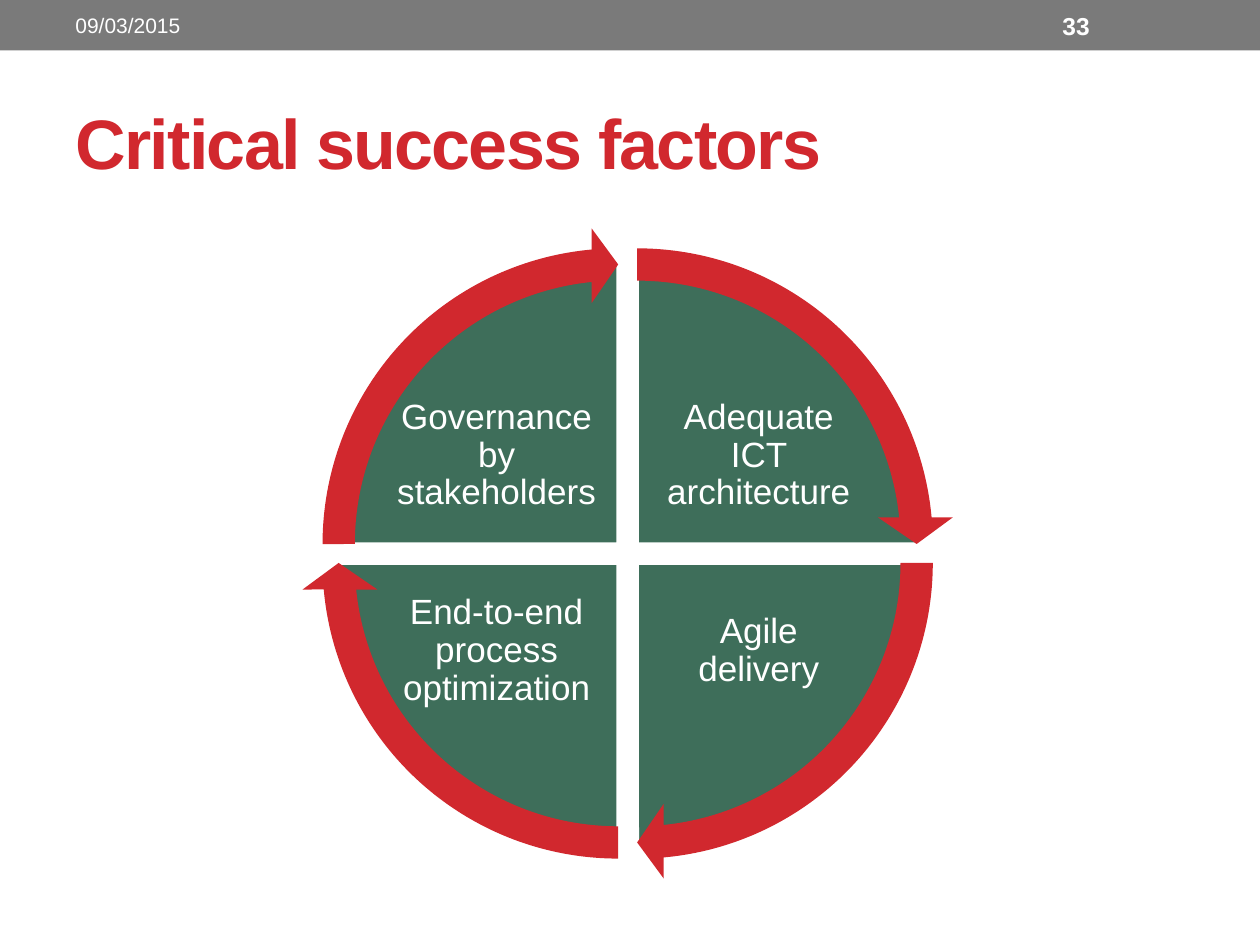
from pptx import Presentation
from pptx.dml.color import RGBColor
from pptx.enum.shapes import MSO_SHAPE
from pptx.enum.text import MSO_ANCHOR, MSO_AUTO_SIZE, PP_ALIGN
from pptx.util import Pt

COLORS = {"white": "FFFFFF", "bar": "7A7A7A", "red": "D1282E", "green": "3E6E5A"}
FONT = "Arial"

# Wheel geometry, in points
CENTER_X, CENTER_Y = 358.7, 316.3
QUARTER_SHIFT = 5.4
PIE_SIZE, ARROW_SIZE = 322.6, 362.2
LABEL_W, LABEL_H = 118.8, 88.6
LABEL_DX, LABEL_DY = 74.9, 55.8

# Angles in adjustment units: 0.6 per degree
FULL_TURN, QUARTER_TURN = 216, 54
ARROW_SWEEP = 50.725

# Factor, horizontal and vertical side of the wheel, start angle; clockwise
FACTORS = [
    ("Adequate ICT architecture", 1, -1, 162),
    ("Agile delivery", 1, 1, 0),
    ("End-to-end process optimization", -1, 1, 54),
    ("Governance by stakeholders", -1, -1, 108),
]


def color(name):
    return RGBColor.from_string(COLORS[name])


def write(frame, text, size, fill="white", bold=False, align=PP_ALIGN.LEFT,
          inset=None, line_spacing=None, tracking=None):
    frame.word_wrap = True
    frame.auto_size = MSO_AUTO_SIZE.NONE
    frame.vertical_anchor = MSO_ANCHOR.MIDDLE
    if inset is not None:
        frame.margin_left = frame.margin_right = Pt(inset)
        frame.margin_top = frame.margin_bottom = Pt(inset)
    paragraph = frame.paragraphs[0]
    paragraph.alignment = align
    if line_spacing:
        paragraph.line_spacing = line_spacing
    run = paragraph.add_run()
    run.text = text
    run.font.name = FONT
    run.font.size = Pt(size)
    run.font.bold = bold
    run.font.color.rgb = color(fill)
    if tracking:
        run.font._element.set("spc", str(tracking * 100))


class SlideBuilder:
    """Holds the current slide and draws its elements, lengths in points."""

    def __init__(self, slide):
        self.slide = slide

    def title(self, text, x, y, w, h):
        title = self.slide.shapes.title
        title.left, title.top, title.width, title.height = map(Pt, (x, y, w, h))
        write(title.text_frame, text, 40, fill="red", bold=True, tracking=-1)

    def text(self, text, x, y, w, h, **style):
        box = self.slide.shapes.add_textbox(Pt(x), Pt(y), Pt(w), Pt(h))
        write(box.text_frame, text, **style)

    def shape(self, preset, x, y, w, h, fill, outline=None, adjustments=()):
        shape = self.slide.shapes.add_shape(preset, Pt(x), Pt(y), Pt(w), Pt(h))
        shape.shadow.inherit = False
        shape.fill.solid()
        shape.fill.fore_color.rgb = color(fill)
        if outline:
            shape.line.color.rgb = color(outline)
            shape.line.width = Pt(2.08)
        else:
            shape.line.fill.background()
        for index, value in enumerate(adjustments):
            shape.adjustments[index] = value

    def wheel_part(self, preset, size, side_x, side_y, **style):
        """Draw a square shape centred on its quarter's own centre."""
        x = CENTER_X + side_x * QUARTER_SHIFT - size / 2
        y = CENTER_Y + side_y * QUARTER_SHIFT - size / 2
        self.shape(preset, x, y, size, size, **style)

    def quarter(self, factor, side_x, side_y, start):
        end = (start + QUARTER_TURN) % FULL_TURN
        self.wheel_part(MSO_SHAPE.PIE, PIE_SIZE, side_x, side_y,
                        fill="green", outline="white", adjustments=(start, end))
        self.text(factor,
                  CENTER_X + side_x * LABEL_DX - LABEL_W / 2,
                  CENTER_Y + side_y * LABEL_DY - LABEL_H / 2,
                  LABEL_W, LABEL_H, size=20, align=PP_ALIGN.CENTER,
                  inset=2.2, line_spacing=0.9)

    def arrow(self, side_x, side_y, start):
        self.wheel_part(MSO_SHAPE.CIRCULAR_ARROW, ARROW_SIZE, side_x, side_y, fill="red",
                        adjustments=(0.051, 3.275, start + ARROW_SWEEP, start, 0.059))


def main():
    deck = Presentation()
    deck.slide_width, deck.slide_height = Pt(720), Pt(540)
    builder = SlideBuilder(deck.slides.add_slide(deck.slide_layouts[5]))

    builder.shape(MSO_SHAPE.RECTANGLE, 0, 0, 720, 28.8, fill="bar")
    builder.title("Critical success factors", 36, 42, 648, 78)
    for factor, side_x, side_y, start in FACTORS:
        builder.quarter(factor, side_x, side_y, start)
    for _, side_x, side_y, start in FACTORS:
        builder.arrow(side_x, side_y, start)
    builder.text("33", 600, 1.5, 84, 26, size=14, bold=True)
    builder.text("09/03/2015", 36, 1.5, 228, 26, size=12)

    deck.save("out.pptx")


if __name__ == "__main__":
    main()
